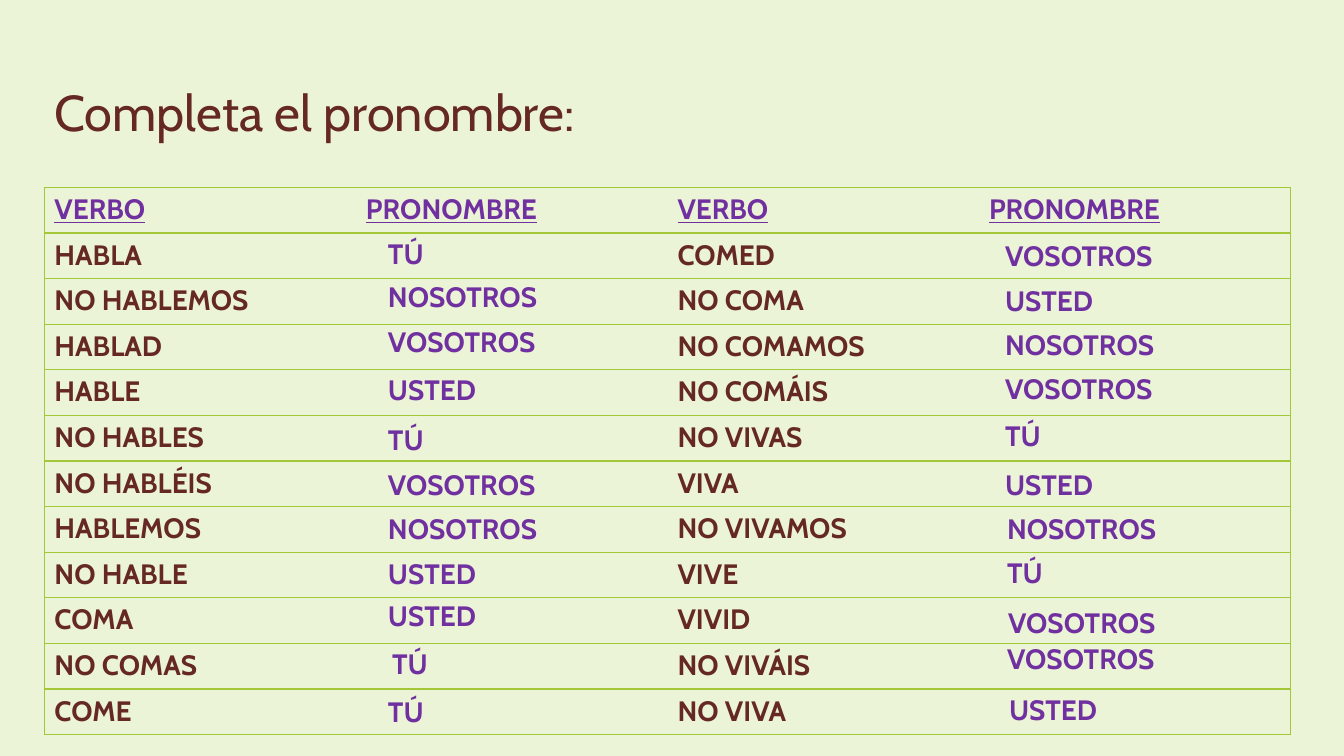
from lxml import etree
from pptx import Presentation
from pptx.dml.color import RGBColor
from pptx.enum.text import MSO_ANCHOR, MSO_AUTO_SIZE
from pptx.oxml.ns import qn
from pptx.util import Inches, Pt

BOTTOM = MSO_ANCHOR.BOTTOM
GROW = MSO_AUTO_SIZE.SHAPE_TO_FIT_TEXT
FONT = "Cabin"
COLORS = {"page": "ECF4D7", "text": "652825", "accent": "7030A0", "line": "A2C838"}
TITLE_BOX = (0.44, 0.21, 12.36, 1.25)
TABLE_BOX = (0.44, 1.86, 12.36, 5.43)
ANSWER_SIZE = (2.2, 0.4)
HEADINGS = ["VERBO", "PRONOMBRE", "VERBO", "PRONOMBRE"]
LEFT_VERBS = ["HABLA", "NO HABLEMOS", "HABLAD", "HABLE", "NO HABLES", "NO HABLÉIS",
              "HABLEMOS", "NO HABLE", "COMA", "NO COMAS", "COME"]
RIGHT_VERBS = ["COMED", "NO COMA", "NO COMAMOS", "NO COMÁIS", "NO VIVAS", "VIVA",
               "NO VIVAMOS", "VIVE", "VIVID", "NO VIVÁIS", "NO VIVA"]
# Each answer: word, then its offset from the left and top of its cell.
ANSWERS = {
    1: [("TÚ", 0.22, 0.02), ("NOSOTROS", 0.22, 0), ("VOSOTROS", 0.22, -0.01),
        ("USTED", 0.22, 0.01), ("TÚ", 0.22, 0.06), ("VOSOTROS", 0.22, 0.05),
        ("NOSOTROS", 0.22, 0.04), ("USTED", 0.22, 0.03), ("USTED", 0.22, -0.01),
        ("TÚ", 0.26, 0.02), ("TÚ", 0.22, 0.04)],
    3: [("VOSOTROS", 0.16, 0.04), ("USTED", 0.16, 0.04), ("NOSOTROS", 0.16, 0.02),
        ("VOSOTROS", 0.16, 0), ("TÚ", 0.16, 0.02), ("USTED", 0.16, 0.05),
        ("NOSOTROS", 0.18, 0.04), ("TÚ", 0.18, 0.02), ("VOSOTROS", 0.19, 0.06),
        ("VOSOTROS", 0.18, -0.03), ("USTED", 0.2, 0.02)],
}


def style_paragraph(paragraph, size, color, bold=False, underline=False):
    """Set the font of a whole paragraph."""
    font = paragraph.font
    font.name, font.size = FONT, Pt(size)
    font.bold, font.underline = bold, underline
    font.color.rgb = RGBColor.from_string(COLORS[color])


def add_text(page, box, text, size, color, bold=False):
    """Add a wrapping one-line text box and return its frame."""
    frame = page.shapes.add_textbox(*map(Inches, box)).text_frame
    frame.word_wrap = True
    paragraph = frame.paragraphs[0]
    paragraph.text = text
    paragraph.line_spacing = 0.9
    style_paragraph(paragraph, size, color, bold)
    return frame


def set_borders(cell, visible):
    """Draw the visible sides of a cell and clear the others."""
    properties = cell._tc.get_or_add_tcPr()
    for side in "LRTB":
        line = etree.SubElement(properties, qn(f"a:ln{side}"), w=str(Pt(1)))
        if side in visible:
            fill = etree.SubElement(line, qn("a:solidFill"))
            etree.SubElement(fill, qn("a:srgbClr"), val=COLORS["line"])
        else:
            etree.SubElement(line, qn("a:noFill"))


def add_title(page, box):
    """Add the slide title at the bottom of its box."""
    frame = add_text(page, box, "Completa el pronombre:", 36, "text")
    frame.vertical_anchor = BOTTOM


def add_verb_table(page, box):
    """Add the verb table, with empty pronoun columns."""
    rows = [HEADINGS] + [[left, "", right, ""] for left, right in zip(LEFT_VERBS, RIGHT_VERBS)]
    table = page.shapes.add_table(len(rows), len(HEADINGS), *map(Inches, box)).table
    table.first_row = table.horz_banding = False
    outer_sides = {0: "L", len(HEADINGS) - 1: "R"}
    for row, words in enumerate(rows):
        heading = row == 0
        for column, word in enumerate(words):
            cell = table.cell(row, column)
            paragraph = cell.text_frame.paragraphs[0]
            paragraph.text = word
            style_paragraph(paragraph, 20, "accent" if heading else "text", True, heading)
            set_borders(cell, "TB" + outer_sides.get(column, ""))
            cell.fill.background()


def add_answers(page, box):
    """Lay the pronouns over the empty cells of the table box."""
    left, top, width, height = box
    column_width = width / len(HEADINGS)
    row_height = height / (len(LEFT_VERBS) + 1)
    for column, answers in ANSWERS.items():
        for row, (word, shift_x, shift_y) in enumerate(answers, start=1):
            x = left + column * column_width + shift_x
            y = top + row * row_height + shift_y
            frame = add_text(page, (x, y, *ANSWER_SIZE), word, 20, "accent", True)
            frame.auto_size = GROW


def main():
    """Build and save the slide."""
    deck = Presentation()
    deck.slide_width, deck.slide_height = Inches(13.33), Inches(7.5)
    page = deck.slides.add_slide(deck.slide_layouts[6])
    page.background.fill.solid()
    page.background.fill.fore_color.rgb = RGBColor.from_string(COLORS["page"])
    add_title(page, TITLE_BOX)
    add_verb_table(page, TABLE_BOX)
    add_answers(page, TABLE_BOX)
    deck.save("out.pptx")


if __name__ == "__main__":
    main()
